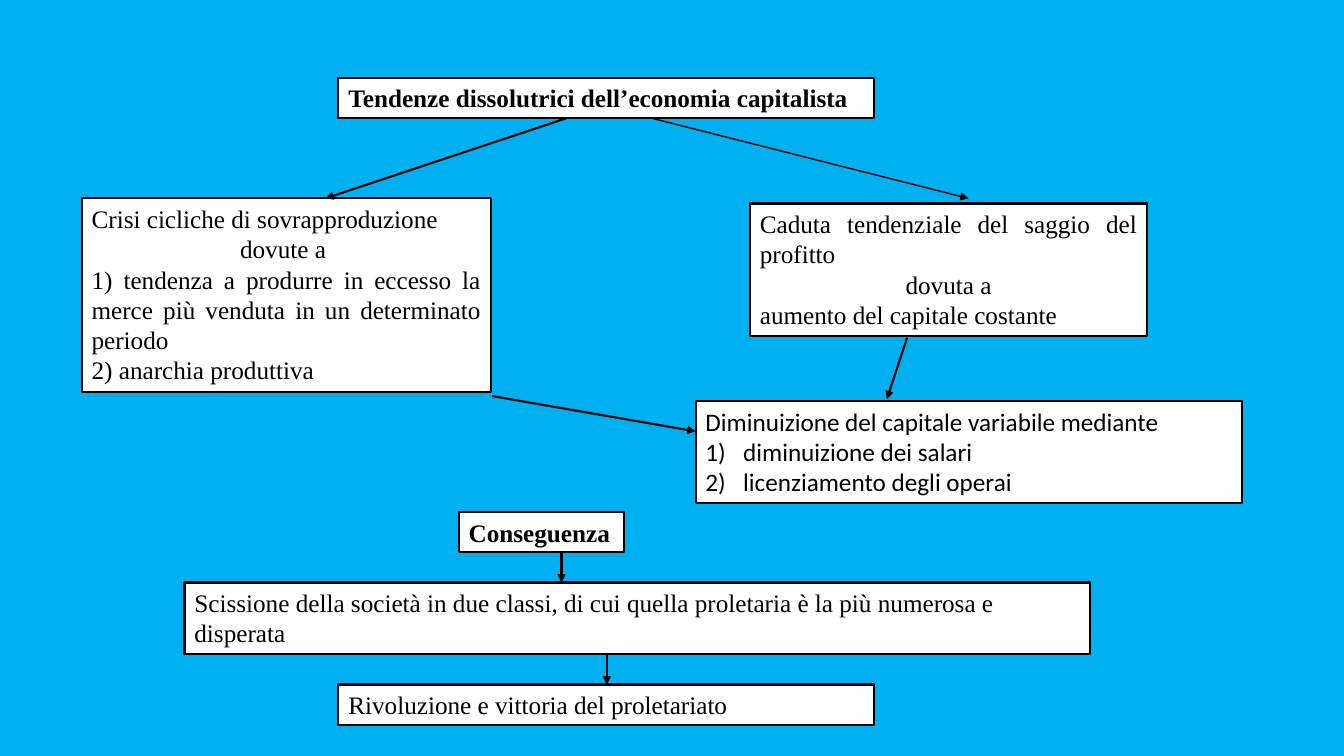
from pptx import Presentation
from pptx.dml.color import RGBColor
from pptx.enum.shapes import MSO_CONNECTOR as Connector
from pptx.enum.text import MSO_AUTO_SIZE as AutoSize, PP_ALIGN as Align
from pptx.oxml.ns import qn
from pptx.util import Cm, Pt
from lxml.etree import SubElement

SKY = RGBColor(0x00, 0xB0, 0xF0)
WHITE = RGBColor(0xFF, 0xFF, 0xFF)
BLACK = RGBColor(0x00, 0x00, 0x00)
SERIF = "Times New Roman"
SANS = "Calibri"
NUMBER_INDENT = Cm(0.95)


def number_paragraph(para):
    properties = para._p.get_or_add_pPr()
    properties.set("marL", str(NUMBER_INDENT))
    properties.set("indent", str(-NUMBER_INDENT))
    SubElement(properties, qn("a:buFont"), typeface="+mj-lt")
    SubElement(properties, qn("a:buAutoNum"), type="arabicParenR")


def add_note(page, origin, place, lines, font=SERIF, bold=False, numbered=()):
    left, top, width, height = place
    box = page.shapes.add_textbox(Cm(origin[0] + left), Cm(origin[1] + top), Cm(width), Cm(height))
    box.fill.solid()
    box.fill.fore_color.rgb = WHITE
    box.line.color.rgb = BLACK
    box.line.width = Pt(1.5)
    frame = box.text_frame
    frame.word_wrap = True
    frame.auto_size = AutoSize.SHAPE_TO_FIT_TEXT
    for index, (text, align) in enumerate(lines):
        para = frame.add_paragraph() if index else frame.paragraphs[0]
        para.alignment = align
        if index in numbered:
            number_paragraph(para)
        span = para.add_run()
        span.text = text
        span.font.name = font
        span.font.size = Pt(18)
        span.font.bold = bold
        span.font.color.rgb = BLACK


def add_arrow(page, origin, start, end, weight=1.5):
    left, top = origin
    arrow = page.shapes.add_connector(
        Connector.STRAIGHT,
        Cm(left + start[0]), Cm(top + start[1]), Cm(left + end[0]), Cm(top + end[1]))
    arrow.line.color.rgb = BLACK
    arrow.line.width = Pt(weight)
    SubElement(arrow.line._get_or_add_ln(), qn("a:tailEnd"), type="triangle")
    SubElement(arrow._element.spPr, qn("a:effectLst"))


def draw_tendencies(page, origin):
    add_note(page, origin, (0, 3.04, 10.31, 4.88), [
        ("Crisi cicliche di sovrapproduzione", Align.JUSTIFY),
        ("dovute a ", Align.CENTER),
        ("1) tendenza a produrre in eccesso la merce più venduta in un determinato periodo",
         Align.JUSTIFY),
        ("2) anarchia produttiva", Align.JUSTIFY)])
    add_note(page, origin, (16.84, 3.17, 10.01, 3.33), [
        ("Caduta tendenziale del saggio del profitto", Align.JUSTIFY),
        ("dovuta a", Align.CENTER),
        ("aumento del capitale costante", Align.JUSTIFY)])
    add_note(page, origin, (6.47, 0, 13.49, 1.02), [
        ("Tendenze dissolutrici dell’economia capitalista", Align.JUSTIFY)], bold=True)
    add_note(page, origin, (15.47, 8.15, 13.77, 2.57), [
        ("Diminuizione del capitale variabile mediante", Align.JUSTIFY),
        ("diminuizione dei salari", Align.JUSTIFY),
        ("licenziamento degli operai", Align.JUSTIFY)], font=SANS, numbered=(1, 2))
    add_arrow(page, origin, (12.21, 1.02), (6.14, 3.04))
    add_arrow(page, origin, (14.37, 1.02), (22.35, 3.04), weight=1)
    add_arrow(page, origin, (10.34, 8.02), (15.47, 8.91))
    add_arrow(page, origin, (20.8, 6.55), (20.29, 8.1))


def draw_consequence(page, origin):
    add_note(page, origin, (0, 1.78, 22.81, 1.8), [
        ("Scissione della società in due classi, di cui quella proletaria è la più numerosa "
         "e disperata", Align.LEFT)])
    add_note(page, origin, (3.88, 4.35, 13.49, 1.02), [
        ("Rivoluzione e vittoria del proletariato", Align.LEFT)])
    add_note(page, origin, (6.91, 0, 4.17, 1.02), [("Conseguenza", Align.LEFT)], bold=True)
    add_arrow(page, origin, (9.5, 1.02), (9.5, 1.78))
    add_arrow(page, origin, (10.64, 3.58), (10.64, 4.35))


def main():
    deck = Presentation()
    deck.slide_width, deck.slide_height = Cm(33.87), Cm(19.05)
    page = deck.slides.add_slide(deck.slide_layouts[6])
    page.background.fill.solid()
    page.background.fill.fore_color.rgb = SKY
    draw_tendencies(page, (2.06, 1.96))
    draw_consequence(page, (4.65, 12.9))
    deck.save("out.pptx")


if __name__ == "__main__":
    main()
